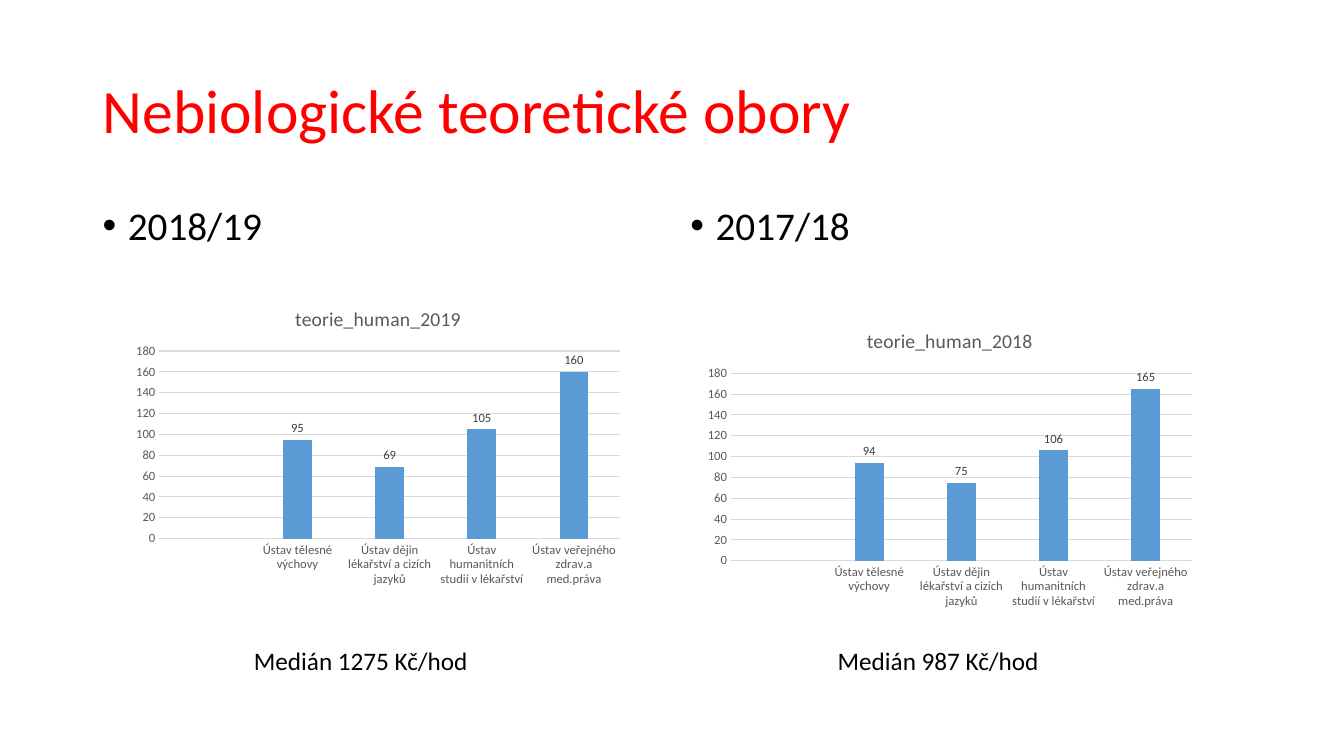
from lxml.etree import SubElement
from pptx import Presentation
from pptx.chart.data import CategoryChartData
from pptx.dml.color import RGBColor
from pptx.enum.chart import XL_CHART_TYPE as ChartType, XL_LABEL_POSITION as LabelPosition, XL_TICK_MARK as TickMark
from pptx.enum.text import MSO_ANCHOR as Anchor
from pptx.oxml.ns import qn
from pptx.util import Emu, Pt

PX = 9144
RED = RGBColor(0xFF, 0x00, 0x00)
BLACK = RGBColor(0x00, 0x00, 0x00)
GREY = RGBColor(0x59, 0x59, 0x59)
DARK_GREY = RGBColor(0x40, 0x40, 0x40)
LIGHT_GREY = RGBColor(0xD9, 0xD9, 0xD9)
BLUE = RGBColor(0x5B, 0x9B, 0xD5)
FONT = "Calibri"

INSTITUTES = [
    "",
    "Ústav tělesné výchovy",
    "Ústav dějin lékařství a cizích jazyků",
    "Ústav humanitních studií v lékařství",
    "Ústav veřejného zdrav.a med.práva",
]
YEARS = [
    ("2018/19", (92, 200, 567, 476), "teorie_human_2019", (125, 288, 500, 300),
     (None, 95, 69, 105, 160), "Medián 1275 Kč/hod", (242, 635, 241, 40)),
    ("2017/18", (675, 200, 567, 476), "teorie_human_2018", (692, 310, 500, 300),
     (None, 94, 75, 106, 165), "Medián 987 Kč/hod", (821, 635, 228, 40)),
]


def style(font, size, color):
    font.name = FONT
    font.size = Pt(size)
    font.bold = False
    font.color.rgb = color


def add_text(box, text, size, color, wrap=True):
    frame = slide.shapes.add_textbox(*(Emu(v * PX) for v in box)).text_frame
    frame.word_wrap = wrap
    frame.text = text
    style(frame.paragraphs[0].runs[0].font, size, color)
    return frame


deck = Presentation()
deck.slide_width, deck.slide_height = Emu(1333 * PX), Emu(750 * PX)
slide = deck.slides.add_slide(deck.slide_layouts[6])

heading = add_text((92, 40, 1150, 145), "Nebiologické teoretické obory", 44, RED)
heading.vertical_anchor = Anchor.MIDDLE
heading.paragraphs[0].line_spacing = 0.9

for year, year_box, chart_title, chart_box, values, median, median_box in YEARS:
    year_line = add_text(year_box, year, 28, BLACK).paragraphs[0]
    year_line.line_spacing = 0.9
    year_line.space_before = Pt(10)
    indents = year_line._p.get_or_add_pPr()
    indents.set("marL", str(25 * PX))
    indents.set("indent", str(-25 * PX))
    SubElement(indents, qn("a:buFont"), typeface="Arial")
    SubElement(indents, qn("a:buChar"), char="•")

    data = CategoryChartData(number_format="#,##0")
    data.categories = INSTITUTES
    data.add_series("Series 1", values)
    chart = slide.shapes.add_chart(
        ChartType.COLUMN_CLUSTERED, *(Emu(v * PX) for v in chart_box), data).chart
    style(chart.font, 10, BLACK)
    chart.has_legend = False
    chart.has_title = True
    chart.chart_title.include_in_layout = False
    chart.chart_title.text_frame.text = chart_title
    style(chart.chart_title.text_frame.paragraphs[0].runs[0].font, 14, GREY)

    for axis in (chart.category_axis, chart.value_axis):
        axis.major_tick_mark = axis.minor_tick_mark = TickMark.NONE
        style(axis.tick_labels.font, 9, GREY)
    institutes_line = chart.category_axis.format.line
    gridlines = chart.value_axis.major_gridlines.format.line
    for line in (institutes_line, gridlines):
        line.color.rgb = LIGHT_GREY
        line.width = Pt(0.75)
    chart.value_axis.format.line.fill.background()
    chart.value_axis.minimum_scale = 0
    chart.value_axis.maximum_scale = 180
    chart.value_axis.major_unit = 20

    columns = chart.plots[0]
    columns.vary_by_categories = False
    columns.gap_width = 219
    columns.overlap = -27
    columns.series[0].format.fill.solid()
    columns.series[0].format.fill.fore_color.rgb = BLUE
    labels = columns.series[0].data_labels
    labels.show_value = True
    labels.number_format = "#,##0"
    labels.number_format_is_linked = False
    labels.position = LabelPosition.OUTSIDE_END
    style(labels.font, 9, DARK_GREY)

    add_text(median_box, median, 18, BLACK, wrap=False)

deck.save("out.pptx")
